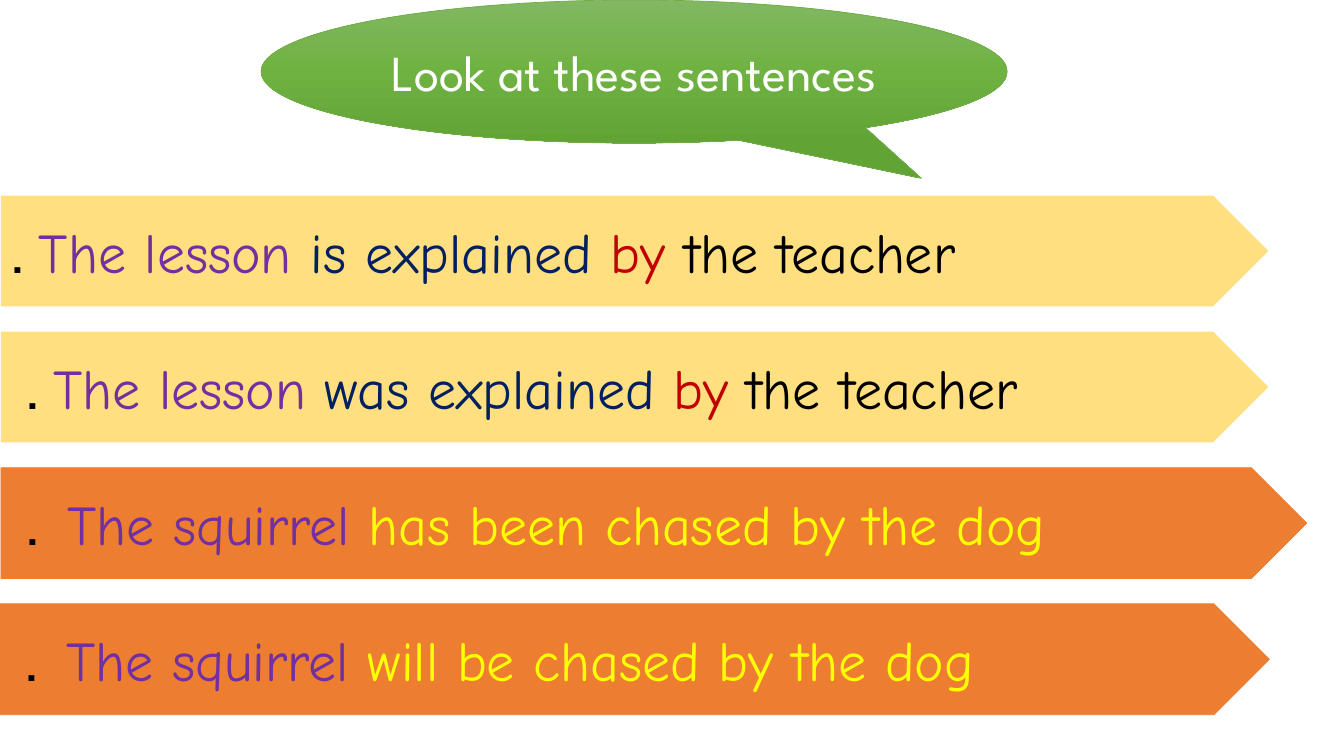
from copy import deepcopy

from lxml import etree
from pptx import Presentation
from pptx.dml.color import RGBColor
from pptx.enum.shapes import MSO_SHAPE
from pptx.enum.text import MSO_ANCHOR, PP_ALIGN
from pptx.oxml.ns import qn
from pptx.util import Inches, Pt

CALLOUT, ARROW = MSO_SHAPE.OVAL_CALLOUT, MSO_SHAPE.PENTAGON
MIDDLE = MSO_ANCHOR.MIDDLE
LEFT, CENTER = PP_ALIGN.LEFT, PP_ALIGN.CENTER
TITLE_FONT, BODY_FONT = "League Spartan", "Comic Neue"

WHITE = RGBColor(0xFF, 0xFF, 0xFF)
BLACK = RGBColor(0, 0, 0)
PURPLE = RGBColor(0x70, 0x30, 0xA0)
NAVY = RGBColor(0x00, 0x20, 0x60)
RED = RGBColor(0xC0, 0, 0)
YELLOW = RGBColor(0xFF, 0xFF, 0)
GOLD = RGBColor(0xFF, 0xC0, 0)
ORANGE = RGBColor(0xED, 0x7D, 0x31)
GREEN = RGBColor(0x70, 0xAD, 0x47)
GREEN_STOPS = (RGBColor(0x81, 0xB8, 0x61), RGBColor(0x6F, 0xB2, 0x42),
               RGBColor(0x62, 0xA3, 0x36))

LESSON, SQUIRREL = ("The lesson ", PURPLE), ("The squirrel ", PURPLE)
BY, TEACHER, STOP = ("by", RED), (" the teacher .", BLACK), ("  .", BLACK)
SENTENCES = [
    (0.01, 12.57, 0.1, GOLD, 50,
     [LESSON, ("is explained ", NAVY), BY, TEACHER]),
    (0.01, 12.57, 0.24, GOLD, 50,
     [LESSON, ("was explained ", NAVY), BY, TEACHER]),
    (0.01, 12.95, 0.24, ORANGE, 100,
     [SQUIRREL, ("has been chased by the dog", YELLOW), STOP]),
    (0, 12.59, 0.24, ORANGE, 100,
     [SQUIRREL, ("will be chased by the dog", YELLOW), STOP]),
]
FIRST_TOP, PITCH, ARROW_HEIGHT = 1.94, 1.35, 1.1


def add_box(slide, kind, x, y, w, h):
    """Add a preset shape without shadow, its text anchored in the middle."""
    s = slide.shapes.add_shape(kind, Inches(x), Inches(y), Inches(w), Inches(h))
    s.shadow.inherit = False
    s.text_frame.word_wrap = True
    s.text_frame.vertical_anchor = MIDDLE
    return s


def add_run(p, text, font, size, color):
    """Append a formatted run to a paragraph."""
    r = p.add_run()
    r.text = text
    r.font.name, r.font.size = font, Pt(size)
    r.font.color.rgb = color


def add_title(slide, x, y, w, h):
    """Draw the green speech balloon with the heading."""
    s = add_box(slide, CALLOUT, x, y, w, h)
    s.adjustments[0], s.adjustments[1] = 0.385, 0.746
    s.fill.gradient()
    s.fill.gradient_angle = 270
    first = next(s._element.spPr.iter(qn("a:gs")))
    first.addnext(deepcopy(first))
    for i, (stop, color) in enumerate(zip(s.fill.gradient_stops, GREEN_STOPS)):
        stop.position = i / 2
        stop.color.rgb = color
    s.line.color.rgb = GREEN
    s.line.width = Pt(0.5)
    p = s.text_frame.paragraphs[0]
    p.alignment = CENTER
    add_run(p, "Look at these sentences", TITLE_FONT, 36, WHITE)


def add_sentence(slide, x, y, w, h, inset, color, opacity, parts):
    """Draw an arrow banner with a right-to-left sentence in coloured parts."""
    s = add_box(slide, ARROW, x, y, w, h)
    s.fill.solid()
    s.fill.fore_color.rgb = color
    if opacity < 100:
        rgb = next(s._element.spPr.iter(qn("a:srgbClr")))
        etree.SubElement(rgb, qn("a:alpha"), val=str(opacity * 1000))
        s.line.fill.background()
    else:
        s.line.color.rgb = color
        s.line.width = Pt(0.5)
    s.text_frame.margin_left = Inches(inset)
    p = s.text_frame.paragraphs[0]
    p.alignment = LEFT
    p._p.get_or_add_pPr().set("rtl", "1")
    for text, ink in parts:
        add_run(p, text, BODY_FONT, 40, ink)


def main():
    """Build and save the slide."""
    prs = Presentation()
    prs.slide_width, prs.slide_height = Inches(13.33), Inches(7.5)
    slide = prs.slides.add_slide(prs.slide_layouts[6])
    add_title(slide, 2.59, 0, 7.4, 1.42)
    for i, (x, w, *style) in enumerate(SENTENCES):
        add_sentence(slide, x, FIRST_TOP + i * PITCH, w, ARROW_HEIGHT, *style)
    prs.save("out.pptx")


if __name__ == "__main__":
    main()
